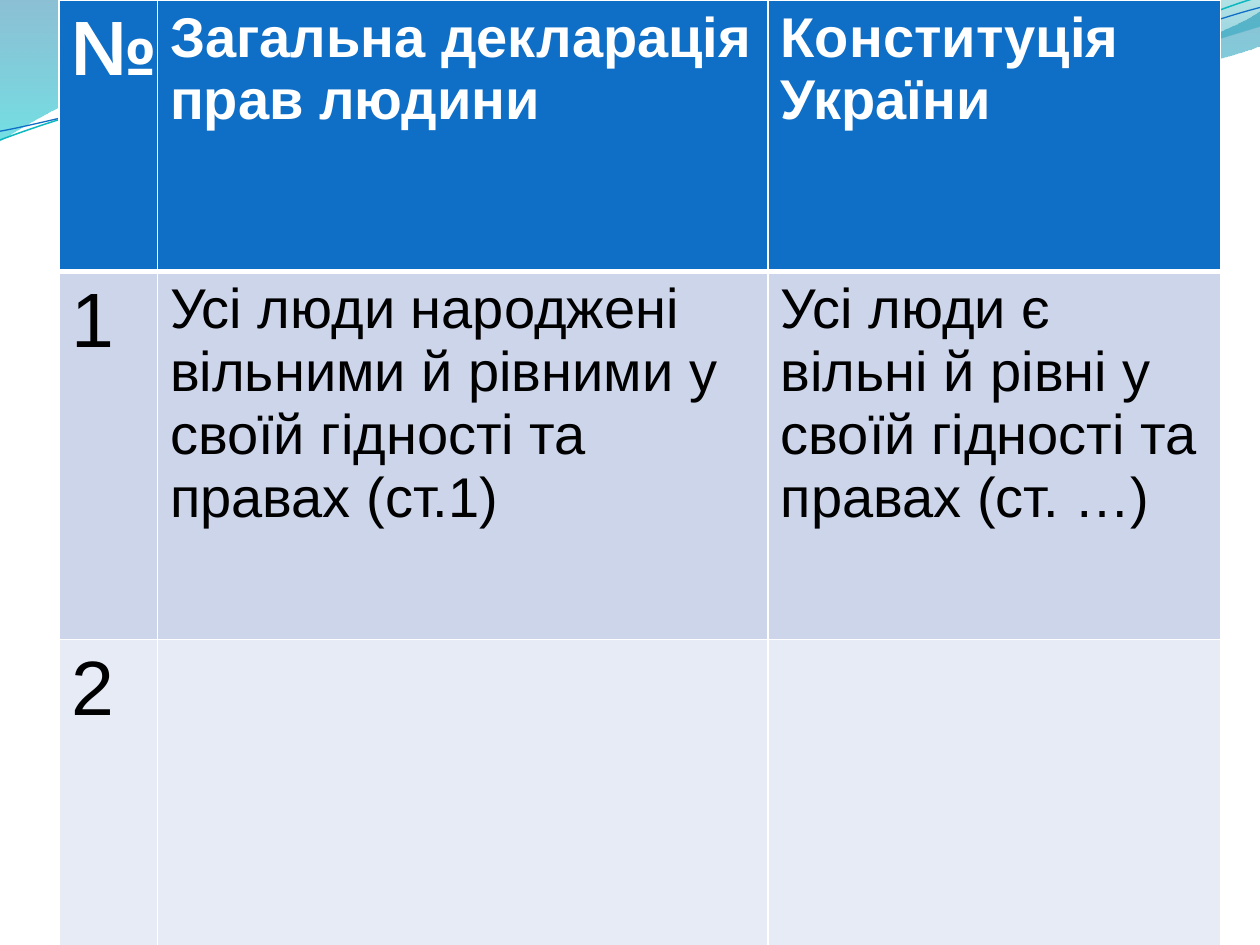
"""Build a slide comparing the human rights declaration with the constitution."""
from dataclasses import dataclass
from math import cos, radians, sin
from typing import Optional

from lxml.etree import SubElement
from pptx import Presentation
from pptx.dml.color import RGBColor
from pptx.oxml.ns import qn
from pptx.util import Pt

Point = tuple[float, float]


@dataclass(frozen=True)
class Theme:
    font: str = "Arial"
    number_size: float = 44
    text_size: float = 32
    border: str = "FFFFFF"
    thin: float = 1
    thick: float = 3
    header_text: str = "FFFFFF"
    body_text: str = "000000"
    row_fills: tuple[str, ...] = ("0F6FC6", "CCD5EA", "E7EBF5")


@dataclass(frozen=True)
class Stop:
    position: float
    color: str
    opacity: int


@dataclass(frozen=True)
class Wave:
    start: Point
    segments: tuple[tuple[Point, ...], ...]
    stops: tuple[Stop, ...] = ()
    line_color: Optional[str] = None
    line_width: float = 0
    center: Point = (0, 0)
    rotation: float = 0


THEME = Theme()
COLUMN_WIDTHS = (56.25, 349, 258.5)
ROW_HEIGHTS = (155.25, 210.25, 178.5)
TABLE_LEFT, TABLE_TOP = 33.75, 0
ROWS = (
    ("№", "Загальна декларація прав людини", "Конституція України"),
    (
        "1",
        "Усі люди народжені вільними й рівними у своїй гідності та правах (ст.1)",
        "Усі люди є вільні й рівні у своїй гідності та правах (ст. …)",
    ),
    ("2", "", ""),
)
WAVES = (
    Wave(
        (0, 0),
        (
            ((317, -0.7),),
            ((343, 12), (478, 45), (546, 45)),
            ((614, 45), (690, 27), (720, 6.5)),
            ((721, 26),),
            ((708, 32), (626, 55), (537, 54)),
            ((446, 54), (275, 20), (185, 24.5)),
            ((93, 26), (33, 60), (-0.7, 81)),
        ),
        stops=(Stop(0, "0074A1", 45), Stop(1, "00C6CF", 55)),
    ),
    Wave(
        (345, -0.7),
        (
            ((366, 8), (491, 44.6), (554, 46.8)),
            ((616, 49.7), (692, 23), (720, 15)),
            ((720, 0),),
        ),
        stops=(Stop(0, "00A1A9", 30), Stop(0.8, "008BBF", 45)),
    ),
    Wave(
        (0, 80),
        (
            ((34.5, 67), (114, 41), (199.5, 37.5)),
            ((284, 34), (427, 64), (513, 57.6)),
            ((600, 51), (675, 11), (718.5, -1.4)),
        ),
        line_color="0AB8BF",
        line_width=0.85,
        center=(359.3, 41.4),
        rotation=357.3,
    ),
    Wave(
        (0, 75),
        (
            ((34, 69), (118, 44), (204, 40)),
            ((290, 37), (430, 60.5), (516, 54)),
            ((602, 48), (677.5, 15), (720, 4.3)),
        ),
        line_color="0F6FC6",
        line_width=0.75,
        center=(359.6, 42.5),
        rotation=357.3,
    ),
)


def apply(target, values: dict) -> None:
    for name, value in values.items():
        setattr(target, name, value)


def unrotated(point: Point, wave: Wave) -> Point:
    angle = radians(-wave.rotation)
    across, down = point[0] - wave.center[0], point[1] - wave.center[1]
    x = wave.center[0] + across * cos(angle) - down * sin(angle)
    y = wave.center[1] + across * sin(angle) + down * cos(angle)
    return Pt(x), Pt(y)


def bend_segments(shape, wave: Wave) -> None:
    lines = list(shape._element.iter(qn("a:lnTo")))
    for segment in wave.segments:
        group, lines = lines[: len(segment)], lines[len(segment):]
        if len(group) == 3:
            curve = group[0].makeelement(qn("a:cubicBezTo"))
            group[0].addprevious(curve)
            for line in group:
                curve.append(line[0])
                line.getparent().remove(line)


def draw_wave(page, wave: Wave) -> None:
    points = [unrotated(point, wave) for segment in wave.segments for point in segment]
    builder = page.shapes.build_freeform(*unrotated(wave.start, wave), scale=1.0)
    builder.add_line_segments(points, close=bool(wave.stops))
    shape = builder.convert_to_shape()
    bend_segments(shape, wave)
    shape.rotation = wave.rotation
    shape.shadow.inherit = False
    if wave.stops:
        shape.line.fill.background()
        shape.fill.gradient()
        shape.fill.gradient_angle = 270
        for stop, values in zip(shape.fill.gradient_stops, wave.stops):
            stop.position = values.position
            stop.color.rgb = RGBColor.from_string(values.color)
        for color, values in zip(shape._element.spPr.iter(qn("a:srgbClr")), wave.stops):
            SubElement(color, qn("a:alpha"), val=str(values.opacity * 1000))
    else:
        shape.fill.background()
        shape.line.color.rgb = RGBColor.from_string(wave.line_color)
        shape.line.width = Pt(wave.line_width)


def draw_borders(cell, widths: dict[str, float]) -> None:
    properties = cell._tc.get_or_add_tcPr()
    for side, width in widths.items():
        line = SubElement(properties, qn(f"a:ln{side}"), w=str(Pt(width)))
        SubElement(SubElement(line, qn("a:solidFill")), qn("a:srgbClr"), val=THEME.border)


def draw_cell(cell, text: str, row: int, column: int) -> None:
    is_header = row == 0
    widths = dict.fromkeys("LRTB", THEME.thin)
    if is_header:
        widths["B"] = THEME.thick
    elif row == 1:
        del widths["T"]
    draw_borders(cell, widths)
    cell.fill.solid()
    cell.fill.fore_color.rgb = RGBColor.from_string(THEME.row_fills[row])
    if not text:
        return
    span = cell.text_frame.paragraphs[0].add_run()
    span.text = text
    size = THEME.text_size if column else THEME.number_size
    apply(span.font, {"name": THEME.font, "size": Pt(size), "bold": is_header})
    color = THEME.header_text if is_header else THEME.body_text
    span.font.color.rgb = RGBColor.from_string(color)


def draw_table(page) -> None:
    frame = page.shapes.add_table(
        len(ROW_HEIGHTS), len(COLUMN_WIDTHS), Pt(TABLE_LEFT), Pt(TABLE_TOP),
        Pt(sum(COLUMN_WIDTHS)), Pt(sum(ROW_HEIGHTS)),
    )
    table = frame.table
    for column, width in zip(table.columns, COLUMN_WIDTHS):
        column.width = Pt(width)
    for row, height in zip(table.rows, ROW_HEIGHTS):
        row.height = Pt(height)
    for row, texts in enumerate(ROWS):
        for column, text in enumerate(texts):
            draw_cell(table.cell(row, column), text, row, column)


def main() -> None:
    deck = Presentation()
    apply(deck, {"slide_width": Pt(720), "slide_height": Pt(540)})
    page = deck.slides.add_slide(deck.slide_layouts[6])
    for wave in WAVES:
        draw_wave(page, wave)
    draw_table(page)
    deck.save("out.pptx")


if __name__ == "__main__":
    main()
